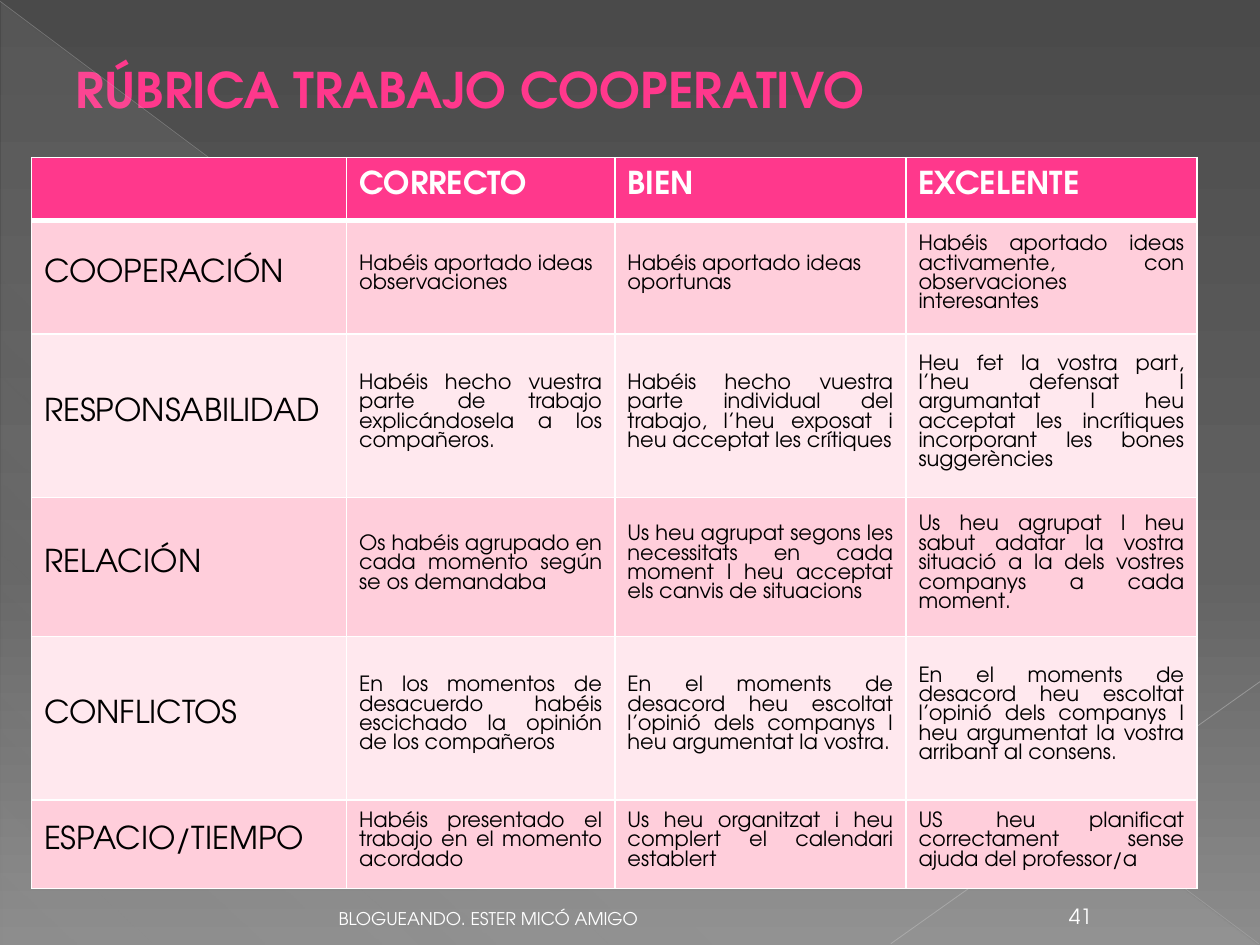
from lxml.etree import SubElement
from pptx import Presentation
from pptx.dml.color import RGBColor
from pptx.enum.shapes import MSO_CONNECTOR, MSO_SHAPE
from pptx.enum.text import MSO_ANCHOR, PP_ALIGN
from pptx.oxml import parse_xml
from pptx.oxml.ns import nsdecls, qn
from pptx.util import Inches, Pt

FONT = "TeX Gyre Adventor"
PINK = RGBColor(0xFF, 0x38, 0x8C)
PALE_PINK = RGBColor(0xFF, 0xCE, 0xDB)
PALEST_PINK = RGBColor(0xFF, 0xE8, 0xEE)
WHITE = RGBColor(0xFF, 0xFF, 0xFF)
BLACK = RGBColor(0, 0, 0)
DARK_GREY = RGBColor(0x4A, 0x4A, 0x4A)
MID_GREY = RGBColor(0x62, 0x62, 0x62)
LIGHT_GREY = RGBColor(0x8C, 0x8C, 0x8C)
VEIL_GREY = RGBColor(0xD2, 0xD2, 0xD2)
LONG_LINE_GREY = RGBColor(0xBF, 0xBF, 0xBF)
SHORT_LINE_GREY = RGBColor(0xC6, 0xC6, 0xC6)

COLUMN_WIDTHS = [2.5, 2.13, 2.31, 2.31]
ROW_HEIGHTS = [0.5, 0.9, 1.3, 1.1, 1.3, 0.7]
RUBRIC = [
    ["", "CORRECTO", "BIEN", "EXCELENTE"],
    ["COOPERACIÓN",
     "Habéis aportado ideas observaciones",
     "Habéis aportado ideas oportunas",
     "Habéis aportado ideas activamente, con observaciones interesantes"],
    ["RESPONSABILIDAD",
     "Habéis hecho vuestra parte de trabajo explicándosela a los compañeros.",
     "Habéis hecho vuestra parte individual del trabajo, l’heu exposat i heu "
     "acceptat les crítiques",
     "Heu fet la vostra part, l’heu defensat I argumantat I heu acceptat les "
     "incrítiques incorporant les bones suggerències"],
    ["RELACIÓN",
     "Os habéis agrupado en cada momento según se os demandaba",
     "Us heu agrupat segons les necessitats en cada moment I heu acceptat els "
     "canvis de situacions",
     "Us heu agrupat I heu sabut adatar la vostra situació a la dels vostres "
     "companys a cada moment."],
    ["CONFLICTOS",
     "En los momentos de desacuerdo habéis escichado la opinión de los compañeros",
     "En el moments de desacord heu escoltat l’opinió dels companys I heu "
     "argumentat la vostra.",
     "En el moments de desacord heu escoltat l’opinió dels companys I heu "
     "argumentat la vostra arribant al consens."],
    ["ESPACIO/TIEMPO",
     "Habéis presentado el trabajo en el momento acordado",
     "Us heu organitzat i heu complert el calendari establert",
     "US heu planificat correctament sense ajuda del professor/a"],
]
LEFT_ALIGNED = {(1, 1), (1, 2)}


def set_values(target, values):
    for name, value in values.items():
        setattr(target, name, value)


def write(text_frame, text, size, color, bold=False, alignment=PP_ALIGN.LEFT):
    paragraph = text_frame.paragraphs[0]
    paragraph.alignment = alignment
    run = paragraph.add_run()
    run.text = text
    set_values(run.font, {"name": FONT, "size": Pt(size), "bold": bold})
    run.font.color.rgb = color
    return paragraph


def gradient(stops, angle):
    """Gradient fill element from (position %, colour, opacity %) stops."""
    marks = "".join(
        f'<a:gs pos="{position * 1000}"><a:srgbClr val="{color}">'
        f'<a:alpha val="{opacity * 1000}"/></a:srgbClr></a:gs>'
        for position, color, opacity in stops)
    return parse_xml(
        f'<a:gradFill {nsdecls("a")} rotWithShape="1"><a:gsLst>{marks}</a:gsLst>'
        f'<a:lin ang="{angle * 60000}" scaled="0"/></a:gradFill>')


def replace_gradient(parent, stops, angle):
    parent.replace(parent.find(qn("a:gradFill")), gradient(stops, angle))


def add_faint_line(slide, start, end, color, width, opacity):
    points = [Inches(value) for value in (*start, *end)]
    line = slide.shapes.add_connector(MSO_CONNECTOR.STRAIGHT, *points)
    line.line.width = Pt(width)
    line.line.color.rgb = color
    properties = line._element.spPr
    alpha = SubElement(next(properties.iter(qn("a:srgbClr"))), qn("a:alpha"))
    alpha.set("val", str(opacity * 1000))
    SubElement(properties, qn("a:effectLst"))


def add_backdrop(slide, width, height):
    fill = slide.background.fill
    fill.gradient()
    background = next(slide._element.iter(qn("p:bgPr")))
    replace_gradient(background, [(0, DARK_GREY, 100), (60, MID_GREY, 100),
                                  (100, LIGHT_GREY, 100)], 90)
    veil = slide.shapes.add_shape(MSO_SHAPE.RIGHT_TRIANGLE, Inches(0.01),
                                  Inches(0.02), Inches(width - 0.02),
                                  Inches(height - 0.02))
    veil.shadow.inherit = False
    veil.line.fill.background()
    veil.fill.gradient()
    replace_gradient(veil._element.spPr, [(0, VEIL_GREY, 10), (70, VEIL_GREY, 8),
                                          (100, VEIL_GREY, 1)], 133)
    bottom = height - 0.01
    add_faint_line(slide, (0, 0.01), (width - 0.01, bottom), LONG_LINE_GREY, 0.39, 35)
    add_faint_line(slide, (width, 5.41), (7.07, bottom), SHORT_LINE_GREY, 0.47, 45)


def add_title(slide, left, top, width, height):
    title = slide.shapes.title
    set_values(title, {"left": Inches(left), "top": Inches(top),
                       "width": Inches(width), "height": Inches(height)})
    title.text_frame.vertical_anchor = MSO_ANCHOR.TOP
    write(title.text_frame, "RÚBRICA TRABAJO COOPERATIVO", 28, PINK, bold=True)


def add_borders(cell, row):
    """White rules, thicker between the header and the first criterion."""
    thick_side = {0: "B", 1: "T"}.get(row)
    for side in "LRTB":
        width = Pt(3 if side == thick_side else 1)
        cell._tc.get_or_add_tcPr().append(parse_xml(
            f'<a:ln{side} {nsdecls("a")} w="{width}"><a:solidFill>'
            f'<a:srgbClr val="{WHITE}"/></a:solidFill></a:ln{side}>'))


def format_cell(cell, row, column):
    set_values(cell, {"margin_left": Inches(0.1), "margin_right": Inches(0.1),
                      "margin_top": 0, "margin_bottom": Inches(0.05),
                      "vertical_anchor": MSO_ANCHOR.MIDDLE})
    add_borders(cell, row)
    header = row == 0
    cell.fill.solid()
    cell.fill.fore_color.rgb = (
        PINK if header else PALE_PINK if row % 2 else PALEST_PINK)
    text = RUBRIC[row][column]
    if text:
        label = header or column == 0
        left = label or (row, column) in LEFT_ALIGNED
        paragraph = write(cell.text_frame, text, 18 if label else 12,
                          WHITE if header else BLACK, bold=header,
                          alignment=PP_ALIGN.LEFT if left else PP_ALIGN.JUSTIFY)
        paragraph.line_spacing = 0.99


def add_rubric(slide, left, top):
    table = slide.shapes.add_table(
        len(ROW_HEIGHTS), len(COLUMN_WIDTHS), Inches(left), Inches(top),
        Inches(sum(COLUMN_WIDTHS)), Inches(sum(ROW_HEIGHTS))).table
    for column, width in zip(table.columns, COLUMN_WIDTHS):
        column.width = Inches(width)
    for row, height in zip(table.rows, ROW_HEIGHTS):
        row.height = Inches(height)
    for row in range(len(ROW_HEIGHTS)):
        for column in range(len(COLUMN_WIDTHS)):
            format_cell(table.cell(row, column), row, column)


def add_footer(slide, top, height):
    for text, left, width, size, alignment in [
            ("BLOGUEANDO. ESTER MICÓ AMIGO", 0.5, 4.66, 10, PP_ALIGN.RIGHT),
            ("41", 8.3, 0.55, 12, PP_ALIGN.CENTER)]:
        box = slide.shapes.add_textbox(Inches(left), Inches(top),
                                       Inches(width), Inches(height))
        set_values(box.text_frame, {"word_wrap": True,
                                    "vertical_anchor": MSO_ANCHOR.BOTTOM})
        write(box.text_frame, text, size, WHITE, alignment=alignment)


def main():
    presentation = Presentation()
    width, height = 10, 7.5
    set_values(presentation, {"slide_width": Inches(width),
                              "slide_height": Inches(height)})
    slide = presentation.slides.add_slide(presentation.slide_layouts[5])
    add_backdrop(slide, width, height)
    add_rubric(slide, 0.25, 1.25)
    add_title(slide, 0.5, 0.42, 8.35, 0.57)
    add_footer(slide, 7.09, 0.33)
    presentation.save("out.pptx")


if __name__ == "__main__":
    main()
